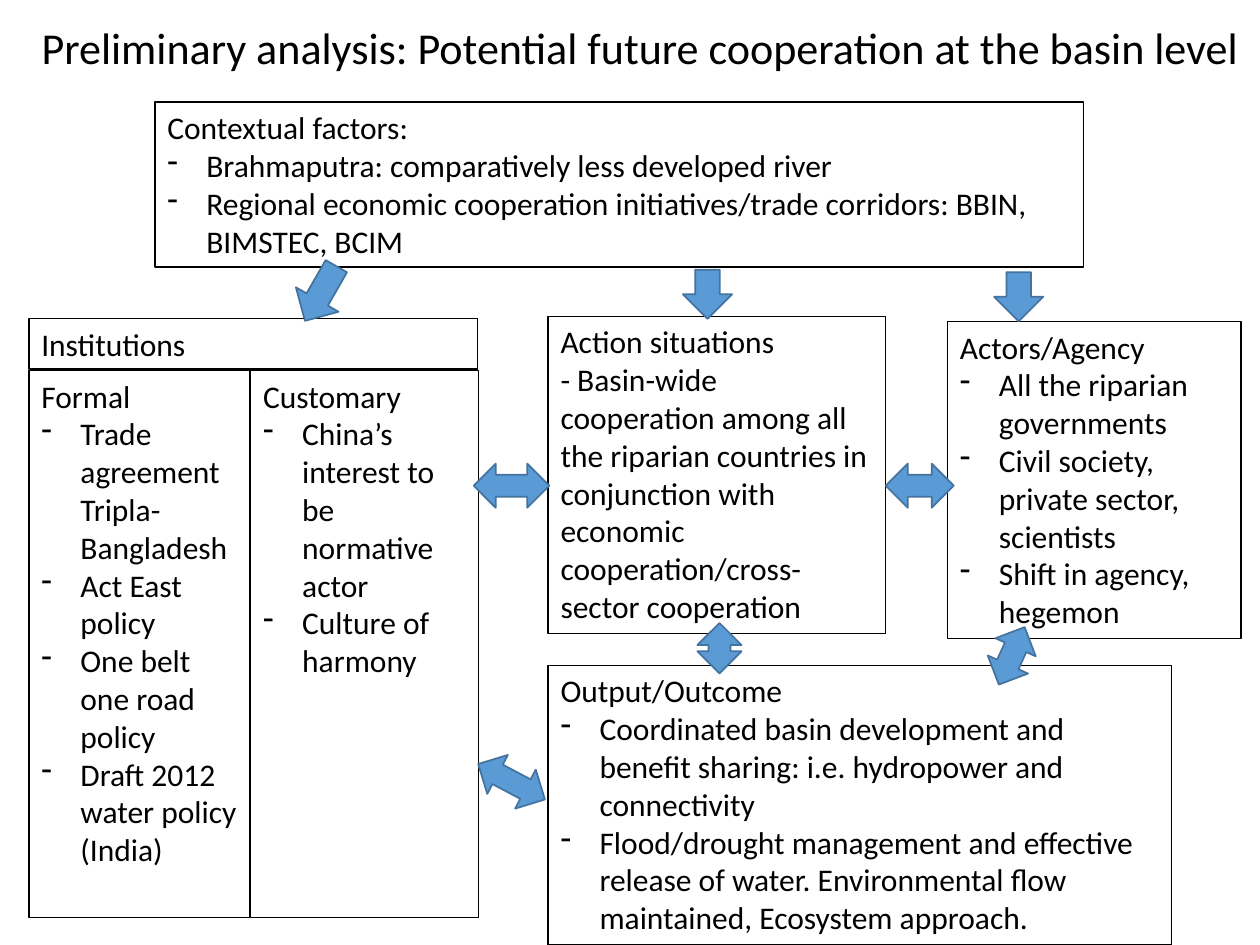
from dataclasses import dataclass

from lxml import etree
from pptx import Presentation
from pptx import util as u
from pptx.dml.color import RGBColor
from pptx.enum import shapes, text
from pptx.oxml.ns import qn


@dataclass(frozen=True)
class Theme:
    font: str = "Calibri"
    ink: RGBColor = RGBColor(0, 0, 0)
    fill: RGBColor = RGBColor(0x5B, 0x9B, 0xD5)
    edge: RGBColor = RGBColor(0x43, 0x73, 0x9E)
    head: float = 25.2
    body: float = 18
    rule: float = 0.75
    rim: float = 1


def put(item, **vals):
    for name, val in vals.items():
        setattr(item, name, val)


def inch(*vals):
    return [u.Inches(v) for v in vals]


class Board:
    def __init__(self, deck, theme):
        self.theme = theme
        self.slide = deck.slides.add_slide(deck.slide_layouts[5])

    def style(self, para, size):
        put(para.font, name=self.theme.font, size=u.Pt(size))
        para.font.color.rgb = self.theme.ink

    def title(self, words, place):
        shape = self.slide.shapes.title
        for name, val in zip(("left", "top", "width", "height"), inch(*place)):
            setattr(shape, name, val)
        frame = shape.text_frame
        frame.text = words
        put(frame, word_wrap=True, auto_size=text.MSO_AUTO_SIZE.NONE,
            vertical_anchor=text.MSO_ANCHOR.MIDDLE)
        para = frame.paragraphs[0]
        put(para, alignment=text.PP_ALIGN.LEFT, line_spacing=0.9)
        self.style(para, self.theme.head)

    def bullet(self, para):
        props = para._p.get_or_add_pPr()
        indent = u.Inches(0.31)
        props.set("marL", str(indent))
        props.set("indent", str(-indent))
        etree.SubElement(props, qn("a:buChar")).set("char", "-")

    def box(self, place, head, items=(), dash=True):
        shape = self.slide.shapes.add_textbox(*inch(*place))
        shape.line.color.rgb = self.theme.ink
        shape.line.width = u.Pt(self.theme.rule)
        frame = shape.text_frame
        put(frame, word_wrap=True, auto_size=text.MSO_AUTO_SIZE.SHAPE_TO_FIT_TEXT)
        frame.text = "\n".join((head, *items))
        for i, para in enumerate(frame.paragraphs):
            self.style(para, self.theme.body)
            if i and dash:
                self.bullet(para)

    def arrow(self, kind, place, turn=0, adjust=None):
        shape = self.slide.shapes.add_shape(kind, *inch(*place))
        put(shape, rotation=turn)
        shape.shadow.inherit = False
        shape.fill.solid()
        shape.fill.fore_color.rgb = self.theme.fill
        shape.line.color.rgb = self.theme.edge
        shape.line.width = u.Pt(self.theme.rim)
        if adjust is not None:
            shape.adjustments[0] = adjust


def main():
    deck = Presentation()
    put(deck, slide_width=u.Inches(10), slide_height=u.Inches(7.5))
    board = Board(deck, Theme())
    board.title("Preliminary analysis: Potential future cooperation at the basin level",
                (0.23, 0.03, 9.77, 0.74))

    # Context
    board.box((1.23, 0.81, 7.37, 1.31), "Contextual factors:", (
        "Brahmaputra: comparatively less developed river",
        "Regional economic cooperation initiatives/trade corridors: BBIN, BIMSTEC, BCIM"))

    # Institutions, with two columns below
    board.box((0.23, 2.94, 1.75, 4.34), "Formal", (
        "Trade agreement Tripla-Bangladesh", "Act East policy",
        "One belt one road policy", "Draft 2012 water policy (India)"))
    board.box((0.23, 2.53, 3.56, 0.4), "Institutions")
    board.box((1.99, 2.94, 1.81, 4.34), "Customary", (
        "China’s interest to be normative actor", "Culture of harmony"))

    # Action, actors and outcome
    board.box((4.35, 2.51, 2.68, 2.52), "Action situations", (
        "- Basin-wide cooperation among all the riparian countries in conjunction "
        "with economic cooperation/cross-sector cooperation",), dash=False)
    board.box((7.52, 2.55, 2.33, 2.52), "Actors/Agency", (
        "All the riparian governments", "Civil society, private sector, scientists",
        "Shift in agency, hegemon"))
    board.box((4.35, 5.28, 4.95, 2.22), "Output/Outcome", (
        "Coordinated basin development and benefit sharing: i.e. hydropower and connectivity",
        "Flood/drought management and effective release of water. "
        "Environmental flow maintained, Ecosystem approach."))

    # Arrows down from the context
    down = shapes.MSO_SHAPE.DOWN_ARROW
    board.arrow(down, (2.35, 2.08, 0.39, 0.5), 29.8)
    board.arrow(down, (7.89, 2.16, 0.39, 0.39))
    board.arrow(down, (5.42, 2.14, 0.39, 0.39))

    # Two-way arrows between the boxes: left, top, width, turn, adjust
    for left, top, wide, turn, adjust in (
            (3.76, 3.68, 0.6, 0, None),
            (7.03, 3.68, 0.54, 0, None),
            (7.78, 5.03, 0.5, 294.2, 0.53),
            (3.76, 6.03, 0.6, 27.9, None),
            (5.51, 4.97, 0.4, 90, None)):
        board.arrow(shapes.MSO_SHAPE.LEFT_RIGHT_ARROW, (left, top, wide, 0.35), turn, adjust)

    deck.save("out.pptx")


if __name__ == "__main__":
    main()
